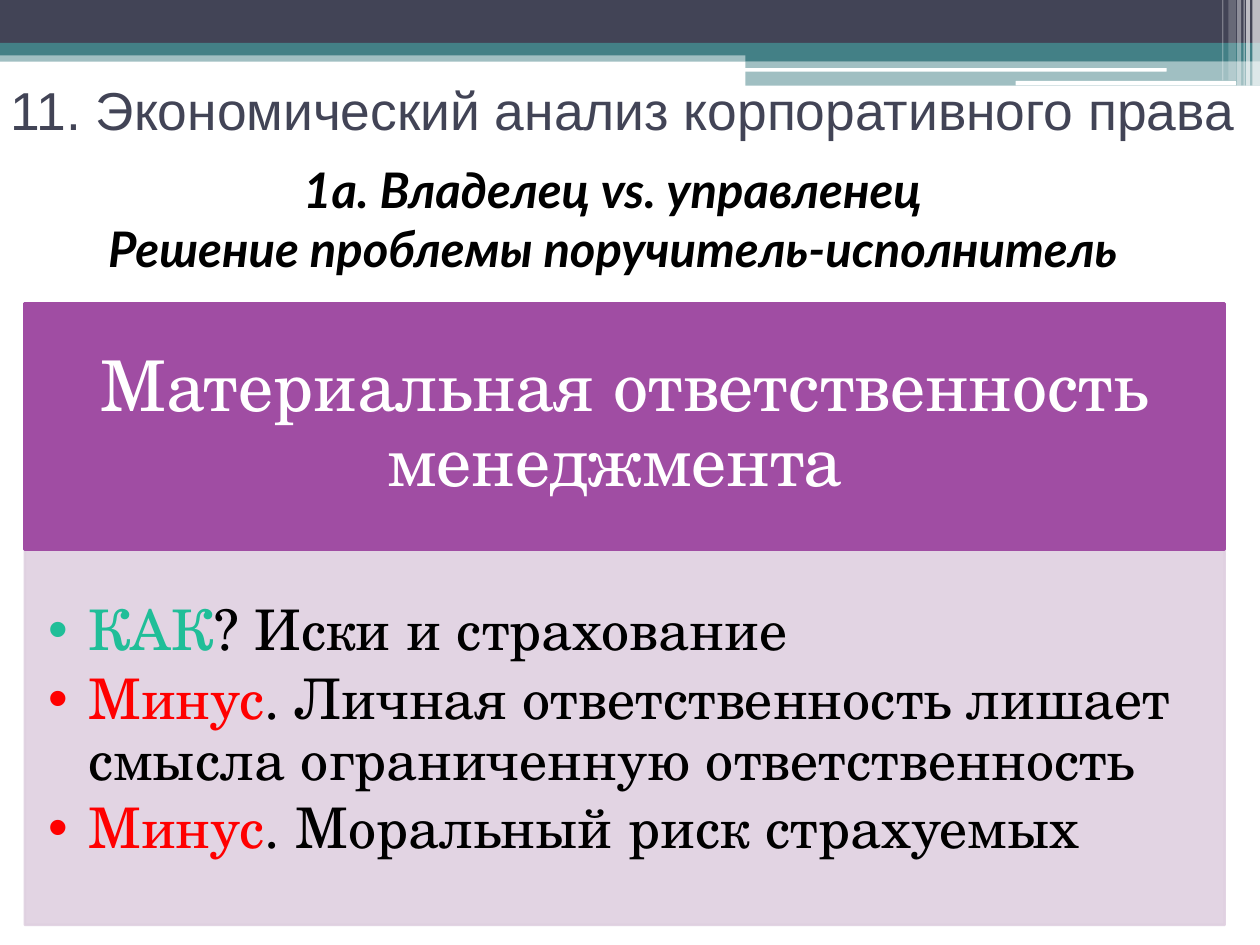
"""Build the corporate law slide on manager liability."""
from lxml.etree import SubElement
from pptx import Presentation
from pptx.dml.color import RGBColor
from pptx.enum.shapes import MSO_SHAPE
from pptx.enum.text import MSO_ANCHOR, MSO_AUTO_SIZE, PP_ALIGN
from pptx.oxml.ns import qn
from pptx.util import Pt

COLORS = {
    "navy": "424456", "teal": "438086", "white": "FFFFFF", "black": "000000",
    "purple": "A04DA3", "lilac": "DFD0E0", "green": "20BE98", "red": "FF0000",
}
FORMATS = {
    "heading": {"size": Pt(30.5), "name": "Arial"},
    "title": {"size": Pt(28), "name": "Lato", "bold": True, "italic": True},
    "banner": {"size": Pt(40), "name": "TeX Gyre Schola"},
    "list": {"size": Pt(32), "name": "TeX Gyre Schola"},
}
BANDS = [
    (0, 28.8, 720, 6.5, "teal", 50),
    (0, 0, 720, 24.5, "navy", 100),
    (0, 24.5, 720, 7.2, "teal", 100),
    (426, 28, 294, 7, "teal", 100),
    (426, 35, 294, 14, "teal", 50),
]
ROUNDED_BARS = [(425.5, 38.9, 241.2, 2), (580.3, 46.2, 126, 2.6)]
STRIPES = [
    (715.7, 4.3, 49, 65), (712.1, 2.2, 49, 65), (710.6, 0.7, 49, 60),
    (707, 2.2, 49, 40), (702, 4.3, 46, 20), (698.4, 0.7, 46, 30),
]
POINTS = [
    ("КАК", "green", "? Иски и страхование"),
    ("Минус", "red", ". Личная ответственность лишает смысла ограниченную ответственность"),
    ("Минус", "red", ". Моральный риск страхуемых"),
]
PANEL_LEFT, PANEL_WIDTH = 14.2, 685.6


def rgb(color):
    """Return the named colour."""
    return RGBColor.from_string(COLORS[color])


def set_opacity(fill_format, opacity):
    """Give a solid fill element an opacity in percent."""
    color = fill_format.find(".//" + qn("a:srgbClr"))
    SubElement(color, qn("a:alpha"), val=str(opacity * 1000))


def paint(shape, color, opacity=100, outlined=False):
    """Fill a shape and give it a matching outline or none."""
    shape.fill.solid()
    shape.fill.fore_color.rgb = rgb(color)
    if outlined:
        shape.line.color.rgb = rgb(color)
        shape.line.width = Pt(1.5)
    else:
        shape.line.fill.background()
    if opacity < 100:
        properties = shape.element.spPr
        set_opacity(properties.find(qn("a:solidFill")), opacity)
        if outlined:
            set_opacity(properties.find(qn("a:ln")), opacity)


def place(shape, left, top, width, height):
    """Position and size a shape in points."""
    for name, value in zip(("left", "top", "width", "height"), (left, top, width, height)):
        setattr(shape, name, Pt(value))


def add_block(slide, bounds, color, opacity=100, kind=MSO_SHAPE.RECTANGLE, outlined=False):
    """Add a filled preset shape without shadow."""
    shape = slide.shapes.add_shape(kind, *map(Pt, bounds))
    shape.shadow.inherit = False
    paint(shape, color, opacity, outlined)
    return shape


def prepare_frame(shape, margins=(7.2, 3.6, 7.2, 3.6)):
    """Set wrapping, middle anchor and margins, and return the frame."""
    frame = shape.text_frame
    settings = {"word_wrap": True, "auto_size": MSO_AUTO_SIZE.NONE,
                "vertical_anchor": MSO_ANCHOR.MIDDLE}
    sides = ("margin_left", "margin_top", "margin_right", "margin_bottom")
    settings.update(zip(sides, map(Pt, margins)))
    for name, value in settings.items():
        setattr(frame, name, value)
    return frame


def add_run(paragraph, text, style, color):
    """Append a formatted run."""
    run = paragraph.add_run()
    run.text = text
    for name, value in FORMATS[style].items():
        setattr(run.font, name, value)
    run.font.color.rgb = rgb(color)


def write_centered(frame, lines, style, color):
    """Write centred lines in the first paragraph and return it."""
    paragraph = frame.paragraphs[0]
    paragraph.alignment = PP_ALIGN.CENTER
    for index, line in enumerate(lines):
        if index:
            paragraph.add_line_break()
        add_run(paragraph, line, style, color)
    return paragraph


def set_spacing(paragraph, after):
    """Set tight line spacing and the space after a paragraph."""
    paragraph.line_spacing = 0.9
    paragraph.space_before = Pt(0)
    paragraph.space_after = Pt(after)


def write_points(frame):
    """Write the bulleted points with coloured lead words."""
    for index, (lead, color, rest) in enumerate(POINTS):
        paragraph = frame.add_paragraph() if index else frame.paragraphs[0]
        properties = paragraph._p.get_or_add_pPr()
        properties.set("marL", str(Pt(22.5)))
        properties.set("indent", str(Pt(-22.5)))
        SubElement(properties, qn("a:buFont"), typeface="Arial")
        SubElement(properties, qn("a:buChar"), char="•")
        set_spacing(paragraph, 4.8)
        add_run(paragraph, lead, "list", color)
        add_run(paragraph, rest, "list", "black")


def add_decoration(slide):
    """Draw the bands, bars and stripes along the top."""
    for *bounds, color, opacity in BANDS:
        add_block(slide, bounds, color, opacity)
    for bounds in ROUNDED_BARS:
        add_block(slide, bounds, "white", kind=MSO_SHAPE.ROUNDED_RECTANGLE)
    for left, width, height, opacity in STRIPES:
        add_block(slide, (left, 0, width, height), "white", opacity)


def main():
    """Build and save the slide."""
    presentation = Presentation()
    presentation.slide_width, presentation.slide_height = Pt(720), Pt(540)
    slide = presentation.slides.add_slide(presentation.slide_layouts[1])
    add_decoration(slide)

    title = slide.shapes.title
    place(title, -20, 82.8, 740, 84.2)
    write_centered(prepare_frame(title), [
        "1а. Владелец vs. управленец",
        "Решение проблемы поручитель-исполнитель",
    ], "title", "black")

    banner = add_block(slide, (PANEL_LEFT, 173.5, PANEL_WIDTH, 140.4), "purple", outlined=True)
    frame = prepare_frame(banner, (22.4, 12.8, 22.4, 12.8))
    text = "Материальная ответственность менеджмента "
    set_spacing(write_centered(frame, [text], "banner", "white"), 14)

    body = slide.placeholders[1]
    place(body, PANEL_LEFT, 313.9, PANEL_WIDTH, 214.6)
    paint(body, "lilac", 90, outlined=True)
    write_points(prepare_frame(body, (13.7, 13.7, 18, 20)))

    heading = slide.shapes.add_textbox(Pt(-8.6), Pt(15.1), Pt(728.6), Pt(94.3))
    write_centered(prepare_frame(heading), ["11. Экономический анализ корпоративного права"],
                   "heading", "navy")
    presentation.save("out.pptx")


if __name__ == "__main__":
    main()
